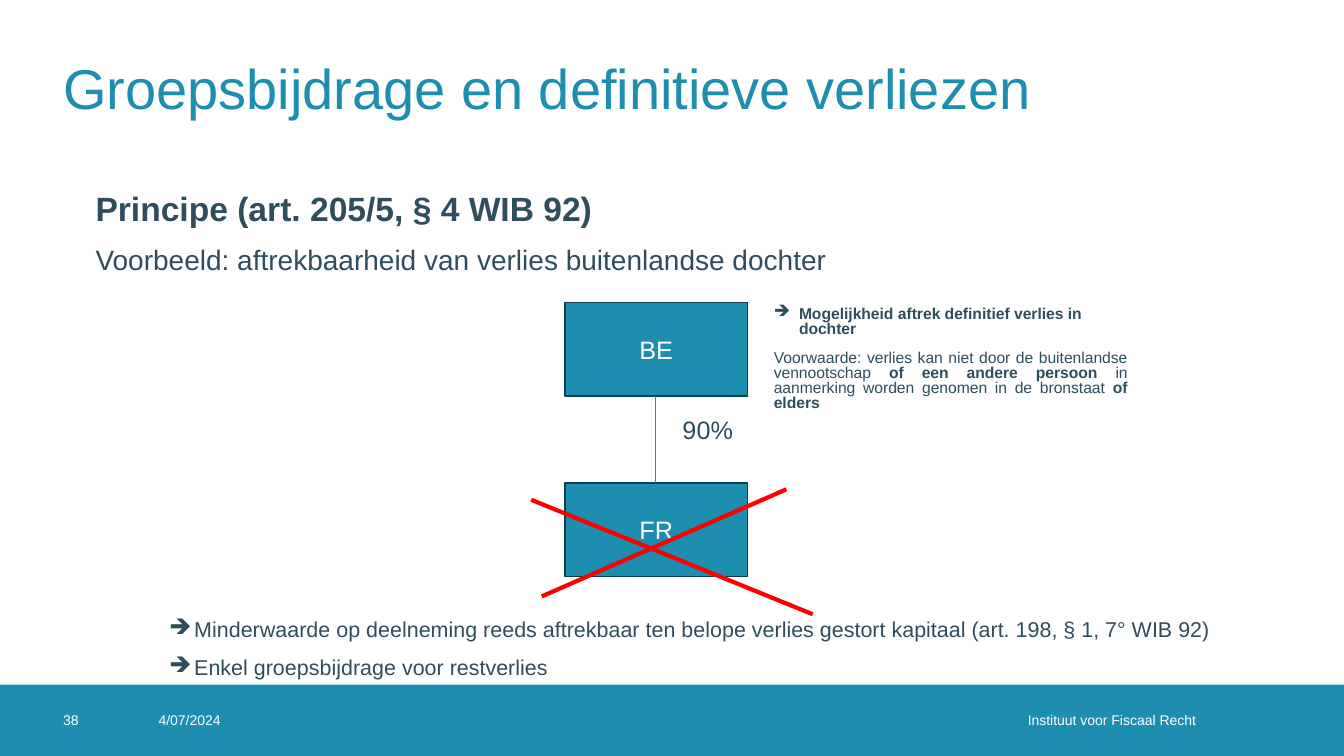
from dataclasses import dataclass

import lxml.etree
import pptx
import pptx.dml.color
import pptx.enum.shapes
import pptx.enum.text
import pptx.oxml.ns
import pptx.util

ALIGN = pptx.enum.text.PP_ALIGN
ANCHOR = pptx.enum.text.MSO_ANCHOR


@dataclass(frozen=True)
class Theme:
    font: str = "Arial"
    teal: str = "1D8DB0"
    edge: str = "0D3E4D"
    ink: str = "2F4D5D"
    white: str = "FFFFFF"
    red: str = "FF0000"
    title: float = 40
    heading: float = 24
    body: float = 20
    label: float = 18
    conclusion: float = 15.3
    note: float = 11.2
    footer: float = 10
    gap: float = 10


@dataclass(frozen=True)
class Frame:
    left: int
    top: int
    width: int
    height: int


@dataclass(frozen=True)
class Span:
    text: str
    bold: bool = False


@dataclass(frozen=True)
class Para:
    spans: tuple[Span, ...]
    size: float
    align: ALIGN = ALIGN.LEFT
    bullet: str = ""
    spacing: float = 1.0


@dataclass(frozen=True)
class Company:
    name: str
    top: int


@dataclass(frozen=True)
class Stroke:
    start: tuple[int, int]
    end: tuple[int, int]
    color: str
    weight: float


THEME = Theme()
PX = 9525  # EMU per px, 96 px to the inch
INDENT = 24
INSETS = (10, 5, 10, 5)


def px(length: int) -> pptx.util.Emu:
    return pptx.util.Emu(length * PX)


def rgb(color: str) -> pptx.dml.color.RGBColor:
    return pptx.dml.color.RGBColor.from_string(color)


def line(text: str, size: float, bold: bool = False, **layout) -> Para:
    return Para((Span(text, bold),), size, **layout)


def add_bullet(paragraph, mark: str) -> None:
    properties = paragraph._p.get_or_add_pPr()
    properties.set("marL", str(px(INDENT)))
    properties.set("indent", str(-px(INDENT)))
    bullet = lxml.etree.SubElement(properties, pptx.oxml.ns.qn("a:buChar"))
    bullet.set("char", mark)


def write_text(box, paras: list[Para], *, color: str = THEME.ink,
               anchor: ANCHOR = ANCHOR.TOP,
               insets: tuple[int, int, int, int] = INSETS) -> None:
    text_frame = box.text_frame
    text_frame.word_wrap = True
    text_frame.vertical_anchor = anchor
    (text_frame.margin_left, text_frame.margin_top,
     text_frame.margin_right, text_frame.margin_bottom) = map(px, insets)
    for index, para in enumerate(paras):
        paragraph = text_frame.add_paragraph() if index else text_frame.paragraphs[0]
        paragraph.alignment = para.align
        paragraph.line_spacing = para.spacing
        paragraph.space_before = pptx.util.Pt(THEME.gap if index else 0)
        if para.bullet:
            add_bullet(paragraph, para.bullet)
        for span in para.spans:
            run = paragraph.add_run()
            run.text = span.text
            run.font.name = THEME.font
            run.font.size = pptx.util.Pt(para.size)
            run.font.bold = span.bold
            run.font.color.rgb = rgb(color)


def add_text(page, frame: Frame, paras: list[Para], **text_format) -> None:
    box = page.shapes.add_textbox(px(frame.left), px(frame.top),
                                  px(frame.width), px(frame.height))
    write_text(box, paras, **text_format)


def add_block(page, frame: Frame, edge: str = ""):
    block = page.shapes.add_shape(
        pptx.enum.shapes.MSO_SHAPE.RECTANGLE, px(frame.left), px(frame.top),
        px(frame.width), px(frame.height))
    block.shadow.inherit = False
    block.fill.solid()
    block.fill.fore_color.rgb = rgb(THEME.teal)
    if edge:
        block.line.color.rgb = rgb(edge)
        block.line.width = pptx.util.Pt(1)
    else:
        block.line.fill.background()
    return block


def add_stroke(page, stroke: Stroke) -> None:
    connector = page.shapes.add_connector(
        pptx.enum.shapes.MSO_CONNECTOR.STRAIGHT,
        *map(px, stroke.start), *map(px, stroke.end))
    connector.line.color.rgb = rgb(stroke.color)
    connector.line.width = pptx.util.Pt(stroke.weight)
    lxml.etree.SubElement(connector._element.spPr, pptx.oxml.ns.qn("a:effectLst"))


def main() -> None:
    deck = pptx.Presentation()
    deck.slide_width, deck.slide_height = px(1280), px(720)
    page = deck.slides.add_slide(deck.slide_layouts[6])

    # Footer band
    band = Frame(0, 652, 1280, 68)
    add_block(page, band)
    for text, left, width, align, right_inset in (
        ("4/07/2024", 151, 76, ALIGN.LEFT, 0),
        ("Instituut voor Fiscaal Recht", 634, 524, ALIGN.RIGHT, 19),
        ("38", 60, 68, ALIGN.LEFT, 0),
    ):
        add_text(page, Frame(left, band.top, width, band.height),
                 [line(text, THEME.footer, align=align)], color=THEME.white,
                 anchor=ANCHOR.MIDDLE, insets=(0, 0, right_inset, 0))

    # Title and introduction
    add_text(page, Frame(60, 22, 1159, 121),
             [line("Groepsbijdrage en definitieve verliezen", THEME.title)],
             color=THEME.teal, anchor=ANCHOR.MIDDLE, insets=(0, 0, 0, 0))
    add_text(page, Frame(81, 174, 1118, 510), [
        line("Principe (art. 205/5, § 4 WIB 92)", THEME.heading, bold=True),
        line("Voorbeeld: aftrekbaarheid van verlies buitenlandse dochter", THEME.body),
    ])

    # Parent and subsidiary
    parent, subsidiary = Company("BE", 288), Company("FR", 460)
    left, width, height = 538, 174, 89
    for company in (subsidiary, parent):
        block = add_block(page, Frame(left, company.top, width, height), THEME.edge)
        write_text(block, [line(company.name, THEME.label, align=ALIGN.CENTER)],
                   color=THEME.white, anchor=ANCHOR.MIDDLE)
    middle = left + width // 2 - 1
    add_stroke(page, Stroke((middle, subsidiary.top), (middle, parent.top + height),
                            THEME.teal, 0.5))
    add_text(page, Frame(640, 390, 112, 52), [line("90%", THEME.label)])

    # Conclusions
    add_text(page, Frame(151, 585, 1051, 87), [
        line(text, THEME.conclusion, bullet="➔", spacing=0.9) for text in (
            "Minderwaarde op deelneming reeds aftrekbaar ten belope verlies "
            "gestort kapitaal (art. 198, § 1, 7° WIB 92)",
            "Enkel groepsbijdrage voor restverlies",
        )
    ])

    # Condition beside the parent
    add_text(page, Frame(727, 288, 357, 108), [
        line("Mogelijkheid aftrek definitief verlies in dochter", THEME.note,
             bold=True, bullet="➔", spacing=0.8),
        Para((
            Span("Voorwaarde: verlies kan niet door de buitenlandse vennootschap "),
            Span("of een andere persoon ", True),
            Span("in aanmerking worden genomen in de bronstaat "),
            Span("of elders", True),
        ), THEME.note, align=ALIGN.JUSTIFY, spacing=0.8),
    ])

    # Red cross over the subsidiary
    for start, end in (((749, 466), (516, 568)), ((506, 476), (774, 585))):
        add_stroke(page, Stroke(start, end, THEME.red, 3))

    deck.save("out.pptx")


if __name__ == "__main__":
    main()
